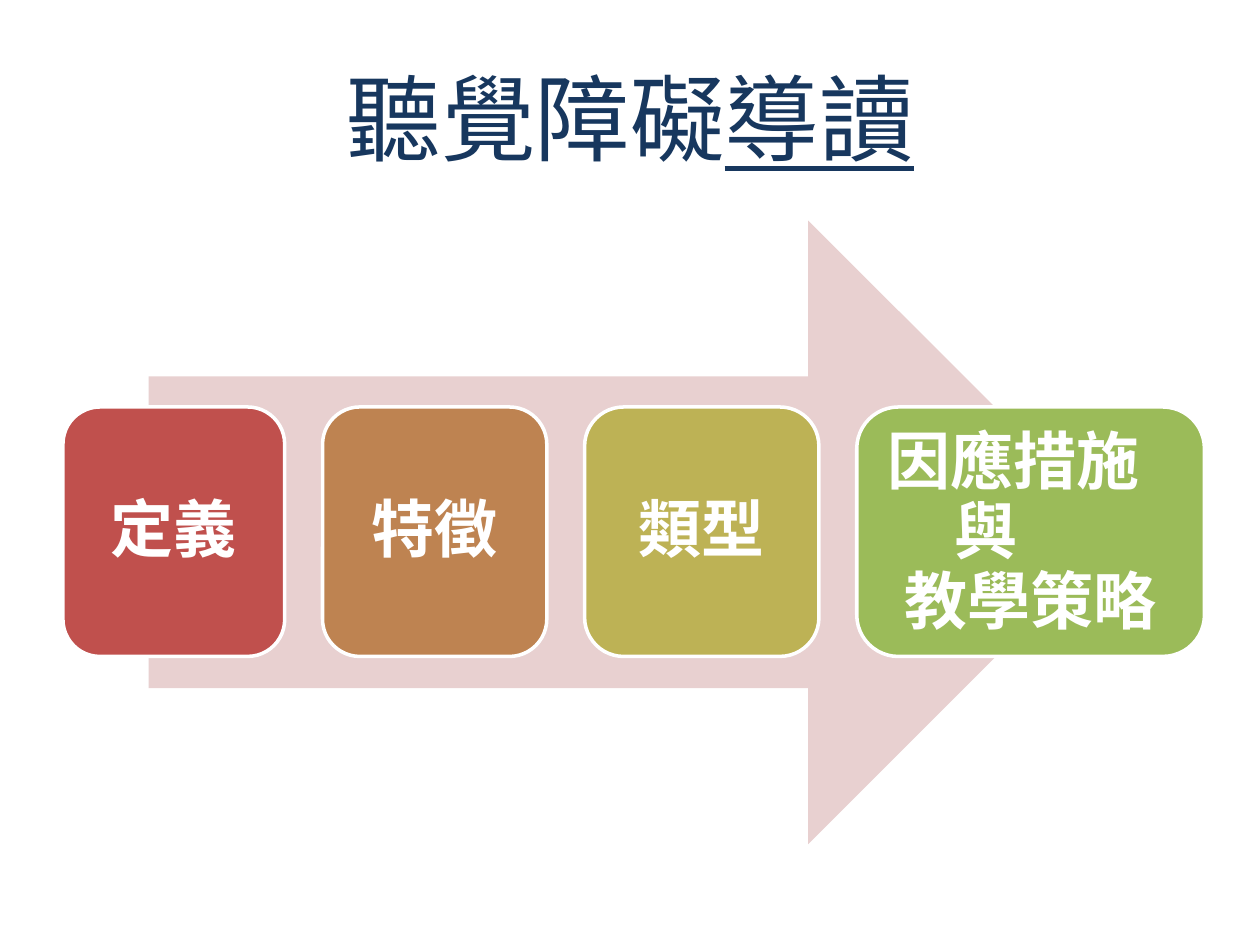
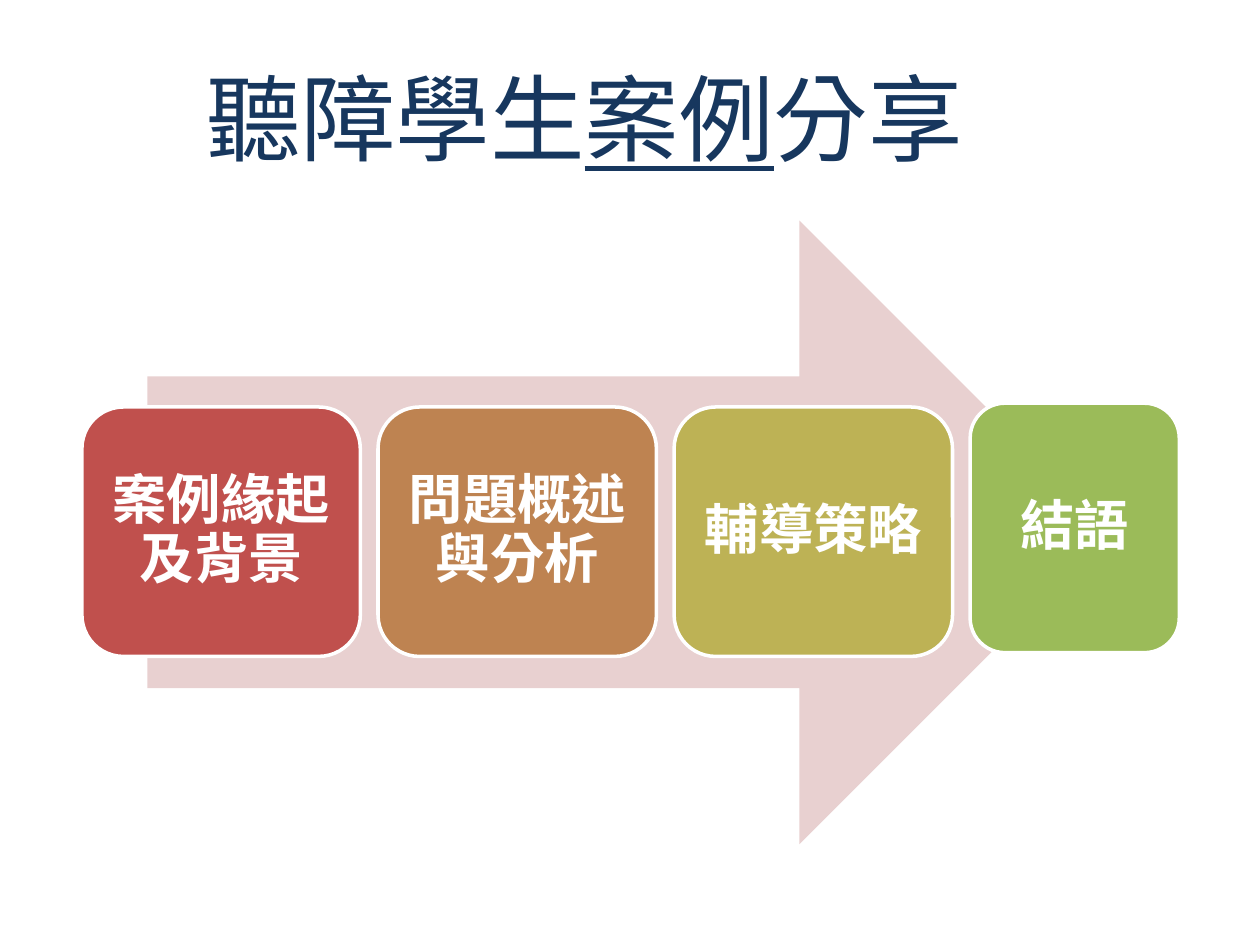
from pptx import Presentation
from pptx.dml.color import RGBColor
from pptx.enum.lang import MSO_LANGUAGE_ID
from pptx.enum.shapes import MSO_SHAPE
from pptx.enum.text import MSO_ANCHOR, PP_ALIGN
from pptx.util import Inches, Pt

ARROW, CARD = MSO_SHAPE.RIGHT_ARROW, MSO_SHAPE.ROUNDED_RECTANGLE
CENTER, LEFT, MIDDLE = PP_ALIGN.CENTER, PP_ALIGN.LEFT, MSO_ANCHOR.MIDDLE
CHINESE = MSO_LANGUAGE_ID.TRADITIONAL_CHINESE
TITLE_ONLY = 5
NAVY, WHITE, PINK = "17375E", "FFFFFF", "E8D0D0"
CARD_COLORS = ("C0504D", "BE8351", "BDB255", "9BBB59")
CARD_HEIGHT = 1.98

SLIDES = [
    {
        "title": [("聽覺障礙", False), ("導讀", True)],
        "title_width": 9,
        "arrow": (1.18, 1.75, 7.71, 4.95),
        "cards_at": (0.5, 3.23),
        "gap": 0.3,
        "size": 36,
        "inset": 0.15,
        "cards": [
            {"lines": [("定義", None)], "width": 1.76},
            {"lines": [("特徵", None)], "width": 1.78},
            {"lines": [("類型", None)], "width": 1.86},
            {
                "lines": [("因應措施", 0), ("與", 0.53), ("教學策略", None)],
                "width": 2.76,
                "spacing": Pt(40),
            },
        ],
    },
    {
        "title": [("聽障學生", False), ("案例", True), ("分享", False)],
        "title_width": 8.28,
        "arrow": (1.17, 1.75, 7.65, 4.95),
        "cards_at": (0.65, 3.23),
        "gap": 0.14,
        "size": 31,
        "inset": 0.13,
        "cards": [
            {"lines": [("案例緣起及背景", None)], "width": 2.21},
            {"lines": [("問題概述與分析", None)], "width": 2.21},
            {"lines": [("輔導策略", None)], "width": 2.21},
            {"lines": [("結語", None)], "width": 1.66, "rise": 0.03},
        ],
    },
]


def color(hex_text):
    """Turn a hex string into a colour."""
    return RGBColor.from_string(hex_text)


def set_format(target, values):
    """Set each named attribute on the target."""
    for name, value in values.items():
        setattr(target, name, value)


def add_run(paragraph, text, hex_text, values):
    """Append a run in the shared font."""
    run = paragraph.add_run()
    run.text = text
    set_format(run.font, {"name": "Arial", "language_id": CHINESE, **values})
    run.font.color.rgb = color(hex_text)


def add_filled(shapes, preset, box, fill):
    """Add a plain filled shape without outline or shadow."""
    shape = shapes.add_shape(preset, *map(Inches, box))
    shape.shadow.inherit = False
    shape.fill.solid()
    shape.fill.fore_color.rgb = color(fill)
    shape.line.fill.background()
    return shape


def fill_title(slide, parts, width):
    """Write the title with its underlined words."""
    title = slide.shapes.title
    box = {"left": 0.5, "top": 0.3, "width": width, "height": 1.25}
    set_format(title, {name: Inches(value) for name, value in box.items()})
    title.text_frame.vertical_anchor = MIDDLE
    paragraph = title.text_frame.paragraphs[0]
    paragraph.alignment = CENTER
    for text, underlined in parts:
        add_run(paragraph, text, NAVY, {"size": Pt(54), "underline": underlined})


def add_card(shapes, box, fill, card, size, inset):
    """Add one rounded step card with its lettering."""
    shape = add_filled(shapes, CARD, box, fill)
    shape.line.color.rgb = color(WHITE)
    shape.line.width = Pt(2)
    frame = shape.text_frame
    sides = ("left", "top", "right", "bottom")
    set_format(frame, {f"margin_{side}": Inches(inset) for side in sides})
    set_format(frame, {"word_wrap": True, "vertical_anchor": MIDDLE})
    for index, (text, indent) in enumerate(card["lines"]):
        paragraph = frame.add_paragraph() if index else frame.paragraphs[0]
        set_format(paragraph, {
            "alignment": CENTER if indent is None else LEFT,
            "line_spacing": card.get("spacing", 0.9),
        })
        if indent:
            paragraph._p.get_or_add_pPr().set("marL", str(Inches(indent)))
        add_run(paragraph, text, WHITE, {"size": Pt(size), "bold": True})


def add_process(slide, content):
    """Add the arrow and the row of step cards over it."""
    shapes = slide.shapes.add_group_shape().shapes
    add_filled(shapes, ARROW, content["arrow"], PINK)
    left, top = content["cards_at"]
    for card, fill in zip(content["cards"], CARD_COLORS):
        box = (left, top - card.get("rise", 0), card["width"], CARD_HEIGHT)
        add_card(shapes, box, fill, card, content["size"], content["inset"])
        left += card["width"] + content["gap"]


def main():
    """Build and save the presentation."""
    presentation = Presentation()
    presentation.slide_width = Inches(10)
    presentation.slide_height = Inches(7.5)
    for content in SLIDES:
        slide = presentation.slides.add_slide(presentation.slide_layouts[TITLE_ONLY])
        fill_title(slide, content["title"], content["title_width"])
        add_process(slide, content)
    presentation.save("out.pptx")


if __name__ == "__main__":
    main()
